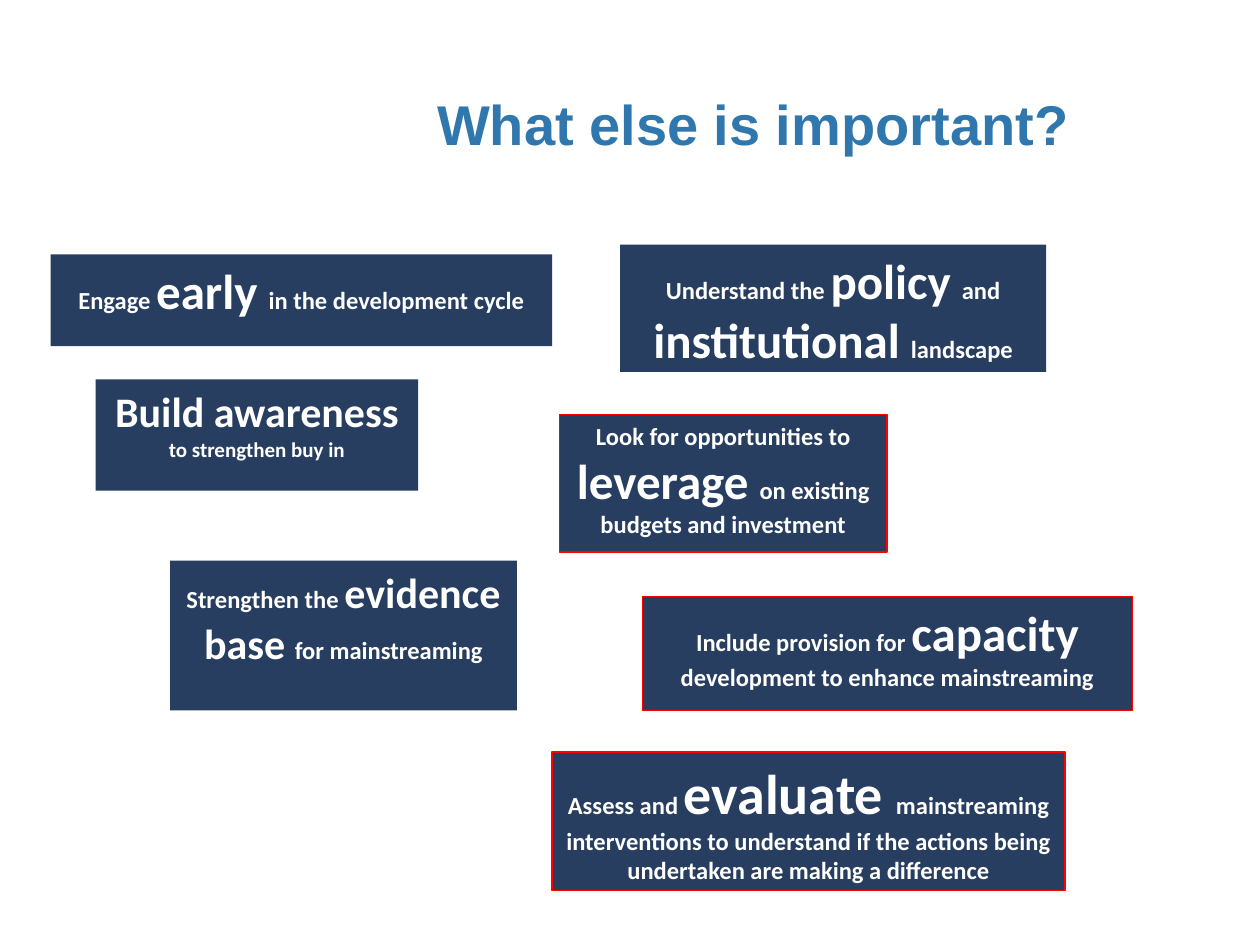
from pptx import Presentation
from pptx import util as u
from pptx.dml.color import RGBColor
from pptx.enum import shapes, text

THEME = {
    "navy": RGBColor.from_string("273E60"),
    "blue": RGBColor.from_string("3077AD"),
    "red": RGBColor.from_string("FF0000"),
    "white": RGBColor.from_string("FFFFFF"),
    "title_font": "Arial",
    "box_font": "Calibri",
    "title": 32, "small": 12, "body": 14, "large": 24, "key": 28, "huge": 32,
}

TITLE = "What else is important?"
TITLE_AREA = (8.56, 0.36, 17.32, 3.84)

# (left, top, width, height) in cm, red outline, [(wording, size name)]
BOXES = [
    ((11.28, 8.36, 6.6, 2.77), True,
     [("Look for opportunities to ", "body"), ("leverage ", "key"),
      ("on existing budgets and investment", "body")]),
    ((1.02, 5.13, 10.11, 1.85), False,
     [("Engage ", "body"), ("early ", "key"),
      ("in the development cycle", "body")]),
    ((12.5, 4.93, 8.59, 2.57), False,
     [("Understand the ", "body"), ("policy ", "key"), ("and ", "body"),
      ("institutional ", "key"), ("landscape", "body")]),
    ((12.95, 12.02, 9.88, 2.31), True,
     [("Include provision for ", "body"), ("capacity ", "key"),
      ("development to enhance mainstreaming", "body")]),
    ((1.93, 7.65, 6.5, 2.24), False,
     [("Build awareness ", "large"), ("to strengthen buy in", "small")]),
    ((3.43, 11.3, 6.99, 3.02), False,
     [("Strengthen the ", "body"), ("evidence base ", "large"),
      ("for mainstreaming", "body")]),
    ((11.13, 15.16, 10.34, 2.79), True,
     [("Assess and ", "body"), ("evaluate ", "huge"),
      ("mainstreaming interventions to understand if the actions being "
       "undertaken are making a difference", "body")]),
]


def add_run(p, wording, size, font, color):
    r = p.add_run()
    r.text = wording
    r.font.name = THEME[font]
    r.font.size = u.Pt(THEME[size])
    r.font.bold = True
    r.font.color.rgb = THEME[color]


def format_frame(tf, align, top_inset):
    tf.word_wrap = True
    tf.auto_size = text.MSO_AUTO_SIZE.NONE
    tf.vertical_anchor = text.MSO_ANCHOR.TOP
    tf.margin_left = tf.margin_right = u.Cm(0.25)
    tf.margin_top, tf.margin_bottom = u.Cm(top_inset), u.Cm(0.13)
    p = tf.paragraphs[0]
    p.alignment = align
    return p


def set_title(s):
    sp = s.shapes.title
    sp.left, sp.top, sp.width, sp.height = map(u.Cm, TITLE_AREA)
    p = format_frame(sp.text_frame, text.PP_ALIGN.LEFT, 1.45)
    add_run(p, TITLE, "title", "title_font", "blue")


def add_box(s, area, outlined, runs):
    sp = s.shapes.add_shape(shapes.MSO_SHAPE.RECTANGLE, *map(u.Cm, area))
    sp.shadow.inherit = False
    sp.fill.solid()
    sp.fill.fore_color.rgb = THEME["navy"]
    if outlined:
        sp.line.color.rgb = THEME["red"]
        sp.line.width = u.Pt(0.75)
    else:
        sp.line.fill.background()
    p = format_frame(sp.text_frame, text.PP_ALIGN.CENTER, 0.13)
    p.space_after = u.Pt(12)
    for wording, size in runs:
        add_run(p, wording, size, "box_font", "white")


def main():
    prs = Presentation()
    prs.slide_width, prs.slide_height = u.Cm(25.4), u.Cm(19.05)
    s = prs.slides.add_slide(prs.slide_layouts[5])
    set_title(s)
    for box in BOXES:
        add_box(s, *box)
    prs.save("out.pptx")


if __name__ == "__main__":
    main()
